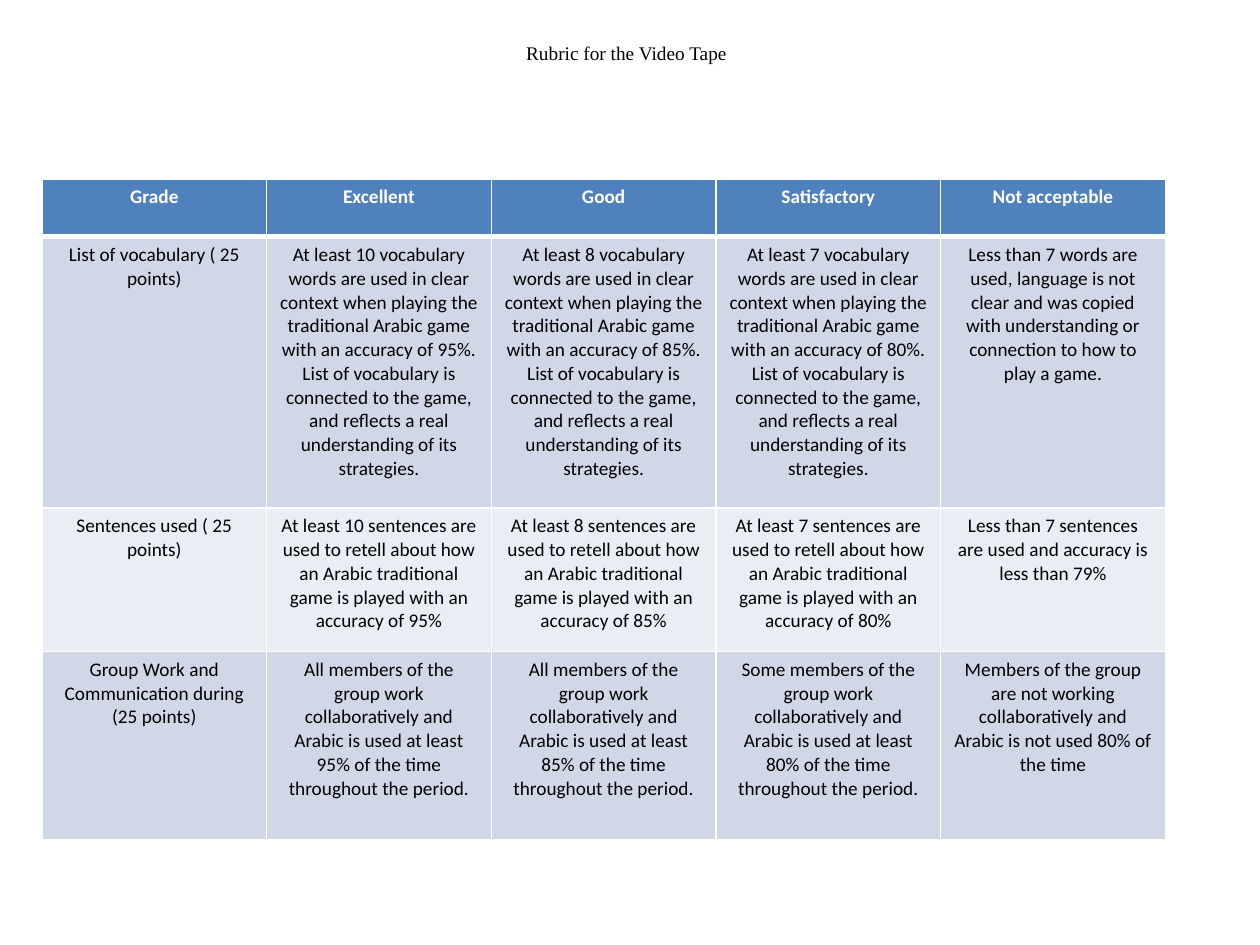
from dataclasses import dataclass

from lxml import etree
from pptx import Presentation
from pptx.dml.color import RGBColor
from pptx.enum import text as t
from pptx.oxml import ns
from pptx.util import Pt

WHITE = RGBColor(0xFF, 0xFF, 0xFF)
BLACK = RGBColor(0x00, 0x00, 0x00)
HEADER_BLUE = RGBColor(0x4F, 0x81, 0xBD)
BAND_DARK = RGBColor(0xD0, 0xD8, 0xE8)
BAND_LIGHT = RGBColor(0xE9, 0xED, 0xF4)

TEXT_SIZE = Pt(11)
COLUMN_WIDTH = Pt(128.4)
RULE, HEADER_RULE = Pt(1), Pt(3)

VOCABULARY = (
    "At least {} vocabulary words are used in clear context when playing the "
    "traditional Arabic game with an accuracy of {}%. List of vocabulary is "
    "connected to the game, and reflects a real understanding of its strategies."
)
SENTENCES = (
    "At least {} sentences are used to retell about how an Arabic traditional "
    "game is played with an accuracy of {}%"
)
GROUP_WORK = (
    "{} members of the group work collaboratively and Arabic is used at least "
    "{}% of the time throughout the period."
)
COUNTS_AND_ACCURACY = ((10, 95), (8, 85), (7, 80))
MEMBERS_AND_ARABIC = (("All", 95), ("All", 85), ("Some", 80))


@dataclass
class RubricRow:
    height: Pt
    fill: RGBColor
    entries: list[str]
    is_header: bool = False


def graded(criterion: str, template: str, levels: tuple, failing: str) -> list[str]:
    """Entries of one criterion, from its name to the failing level."""
    return [criterion, *(template.format(*level) for level in levels), failing]


ROWS = [
    RubricRow(Pt(33), HEADER_BLUE,
              ["Grade", "Excellent", "Good", "Satisfactory", "Not acceptable"], True),
    RubricRow(Pt(155), BAND_DARK, graded(
        "List of vocabulary ( 25 points)", VOCABULARY, COUNTS_AND_ACCURACY,
        "Less than 7 words are used, language is not clear and was copied with "
        "understanding or connection to how to play a game.")),
    RubricRow(Pt(82), BAND_LIGHT, graded(
        "Sentences used ( 25 points)", SENTENCES, COUNTS_AND_ACCURACY,
        "Less than 7 sentences are used and accuracy is less than 79%")),
    RubricRow(Pt(107.5), BAND_DARK, graded(
        "Group Work and Communication during (25 points)", GROUP_WORK, MEMBERS_AND_ARABIC,
        "Members of the group are not working collaboratively and Arabic is not "
        "used 80% of the time")),
]


def set_borders(cell, top: int, bottom: int) -> None:
    properties = cell._tc.get_or_add_tcPr()
    widths = {"lnL": RULE, "lnR": RULE, "lnT": top, "lnB": bottom}
    for position, (side, width) in enumerate(widths.items()):
        line = etree.Element(ns.qn(f"a:{side}"), w=str(int(width)))
        fill = etree.SubElement(line, ns.qn("a:solidFill"))
        etree.SubElement(fill, ns.qn("a:srgbClr"), val=str(WHITE))
        properties.insert(position, line)


def format_paragraph(paragraph, font_name: str, color: RGBColor, bold: bool = False) -> None:
    paragraph.alignment = t.PP_ALIGN.CENTER
    font = paragraph.font
    font.name, font.size, font.bold = font_name, TEXT_SIZE, bold
    font.color.rgb = color


def add_title(slide, wording: str) -> None:
    title = slide.shapes.title
    title.left, title.top, title.width, title.height = Pt(-2), Pt(12), Pt(720), Pt(36)
    title.text = wording
    title.text_frame.vertical_anchor = t.MSO_ANCHOR.MIDDLE
    format_paragraph(title.text_frame.paragraphs[0], "Times New Roman", BLACK)


def add_rubric(slide, rows: list[RubricRow]) -> None:
    column_count = len(rows[0].entries)
    rubric = slide.shapes.add_table(
        len(rows), column_count, Pt(24), Pt(102.3),
        COLUMN_WIDTH * column_count, sum(row.height for row in rows)).table
    for column in rubric.columns:
        column.width = COLUMN_WIDTH
    for r, row in enumerate(rows):
        rubric.rows[r].height = row.height
        top = HEADER_RULE if r and rows[r - 1].is_header else RULE
        bottom = HEADER_RULE if row.is_header else RULE
        for cell, entry in zip(rubric.rows[r].cells, row.entries):
            cell.text = entry
            cell.fill.solid()
            cell.fill.fore_color.rgb = row.fill
            set_borders(cell, top, bottom)
            format_paragraph(cell.text_frame.paragraphs[0], "Calibri",
                             WHITE if row.is_header else BLACK, row.is_header)


def main() -> None:
    presentation = Presentation()
    presentation.slide_width, presentation.slide_height = Pt(720), Pt(540)
    slide = presentation.slides.add_slide(presentation.slide_layouts.get_by_name("Title Only"))
    add_title(slide, "Rubric for the Video Tape")
    add_rubric(slide, ROWS)
    presentation.save("out.pptx")


if __name__ == "__main__":
    main()
